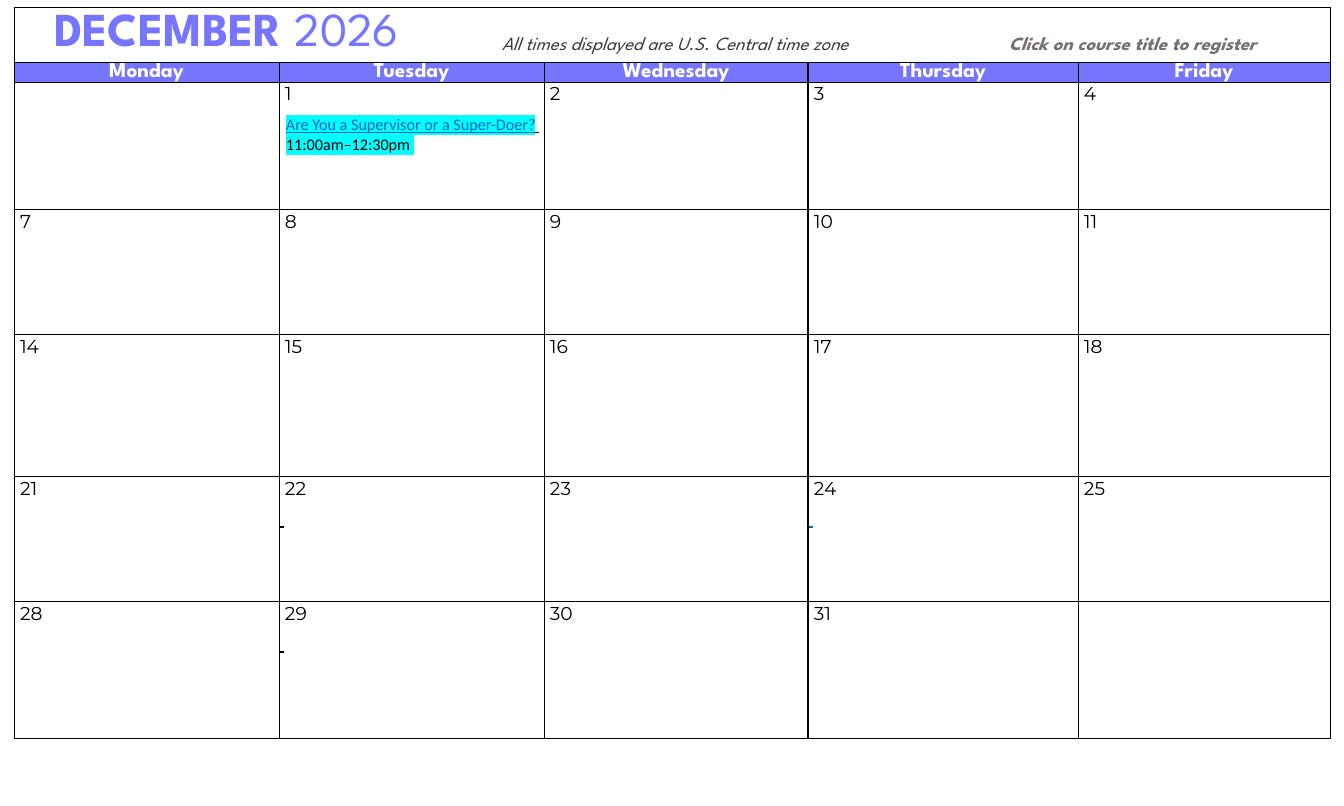
from lxml.etree import SubElement
from pptx import Presentation
from pptx.dml.color import RGBColor
from pptx.enum.text import MSO_ANCHOR, PP_ALIGN
from pptx.oxml.ns import qn
from pptx.util import Inches, Pt

COLORS = {
    "violet": "7575FF", "white": "FFFFFF", "black": "000000",
    "link": "0563C1", "cyan": "00FFFF", "dark": "3A3838", "gray": "757070",
}
WEEKDAYS = ["Monday", "Tuesday", "Wednesday", "Thursday", "Friday"]
FIRST_MONDAY = -1 + 1 - 0
LAST_DAY = 31
COLUMN_WIDTHS = [265, 265, 264, 270, 252]
ROW_HEIGHTS = [55, 20, 128, 125, 142, 125, 137]
TABLE_LEFT, TABLE_TOP = 14, 7
EVENTS = {1: ("Are You a Supervisor or a Super-Doer?", "11:00am–12:30pm ")}
UNDERLINED_SPACES = {22: "black", 24: "link", 29: "black"}
NOTES = [
    ("All times displayed are U.S. Central time zone", 493, 427, "dark", False),
    ("Click on course title to register", 1000, 295, "gray", True),
]
NOTE_TOP, NOTE_HEIGHT = 27, 31
EMU_PER_PX = Inches(15) / 1344


def px(value):
    return round(value * EMU_PER_PX)


def style(font, name, size, color, bold=False, italic=False):
    font.name, font.size = name, Pt(size)
    font.bold, font.italic = bold, italic
    font.color.rgb = RGBColor.from_string(COLORS[color])


def indent(paragraph, distance):
    properties = paragraph._p.get_or_add_pPr()
    properties.set("marL", str(px(distance)))
    properties.set("indent", "0")


def add_run(paragraph, text, color="black", underline=False, highlight=None):
    run = paragraph.add_run()
    run.text = text
    run.font.underline = underline
    run.font.color.rgb = RGBColor.from_string(COLORS[color])
    if highlight:
        mark = SubElement(run.font._element, qn("a:highlight"))
        SubElement(mark, qn("a:srgbClr")).set("val", COLORS[highlight])


def add_line(frame, distance=0, space_before=0):
    paragraph = frame.add_paragraph()
    indent(paragraph, distance)
    paragraph.space_before = Pt(space_before)
    style(paragraph.font, "Calibri", 13, "black")
    return paragraph


def format_cell(cell, fill, thick_sides):
    cell.margin_left = cell.margin_right = cell.margin_top = px(1)
    cell.margin_bottom = 0
    properties = cell._tc.get_or_add_tcPr()
    for side in ("lnL", "lnR", "lnT", "lnB"):
        width = Pt(1.5) if side in thick_sides else Pt(0.75)
        line = SubElement(properties, qn(f"a:{side}"), w=str(width))
        color = SubElement(SubElement(line, qn("a:solidFill")), qn("a:srgbClr"))
        color.set("val", COLORS["black"])
    cell.fill.solid()
    cell.fill.fore_color.rgb = RGBColor.from_string(COLORS[fill])


def fill_day(cell, day):
    frame = cell.text_frame
    date = frame.paragraphs[0]
    date.text = str(day)
    indent(date, 5)
    style(date.font, "Montserrat", 15, "black")
    if day in EVENTS:
        title, hours = EVENTS[day]
        line = add_line(frame, 6, 8)
        add_run(line, title, "link", True, "cyan")
        add_run(line, " ", underline=True)
        add_run(add_line(frame, 6), hours, highlight="cyan")
    if day in UNDERLINED_SPACES:
        add_run(add_line(frame, 0, 8), " ", UNDERLINED_SPACES[day], True)


def add_calendar(slide):
    table = slide.shapes.add_table(
        len(ROW_HEIGHTS), len(WEEKDAYS), px(TABLE_LEFT), px(TABLE_TOP),
        px(sum(COLUMN_WIDTHS)), px(sum(ROW_HEIGHTS))).table
    table.first_row = table.horz_banding = False
    for column, width in zip(table.columns, COLUMN_WIDTHS):
        column.width = px(width)
    for row, height in zip(table.rows, ROW_HEIGHTS):
        row.height = px(height)

    for row in range(len(ROW_HEIGHTS)):
        for column, weekday in enumerate(WEEKDAYS):
            cell = table.cell(row, column)
            thick_sides = {2: ["lnR"], 3: ["lnL"]}.get(column, []) if row else []
            format_cell(cell, "violet" if row == 1 else "white", thick_sides)
            day = FIRST_MONDAY + 7 * (row - 2) + column
            if row == 1:
                cell.margin_left = cell.margin_right = cell.margin_top = 0
                cell.vertical_anchor = MSO_ANCHOR.MIDDLE
                paragraph = cell.text_frame.paragraphs[0]
                paragraph.text = weekday
                paragraph.alignment = PP_ALIGN.CENTER
                style(paragraph.font, "League Spartan", 17, "white", True)
            elif row > 1 and 1 <= day <= LAST_DAY:
                fill_day(cell, day)

    heading = table.cell(0, 0)
    heading.merge(table.cell(0, len(WEEKDAYS) - 1))
    heading.vertical_anchor = MSO_ANCHOR.MIDDLE
    paragraph = heading.text_frame.paragraphs[0]
    indent(paragraph, 39)
    for text, bold in (("DECEMBER ", True), ("2026", False)):
        run = paragraph.add_run()
        run.text = text
        style(run.font, "League Spartan", 38, "violet", bold)


def add_notes(slide):
    for text, left, width, color, bold in NOTES:
        box = slide.shapes.add_textbox(
            px(left), px(NOTE_TOP), px(width), px(NOTE_HEIGHT))
        box.text_frame.word_wrap = True
        paragraph = box.text_frame.paragraphs[0]
        paragraph.text = text
        style(paragraph.font, "League Spartan", 15, color, bold, True)


def main():
    presentation = Presentation()
    presentation.slide_width, presentation.slide_height = Inches(15), Inches(9)
    slide = presentation.slides.add_slide(presentation.slide_layouts[6])
    add_calendar(slide)
    add_notes(slide)
    presentation.save("out.pptx")


if __name__ == "__main__":
    main()
